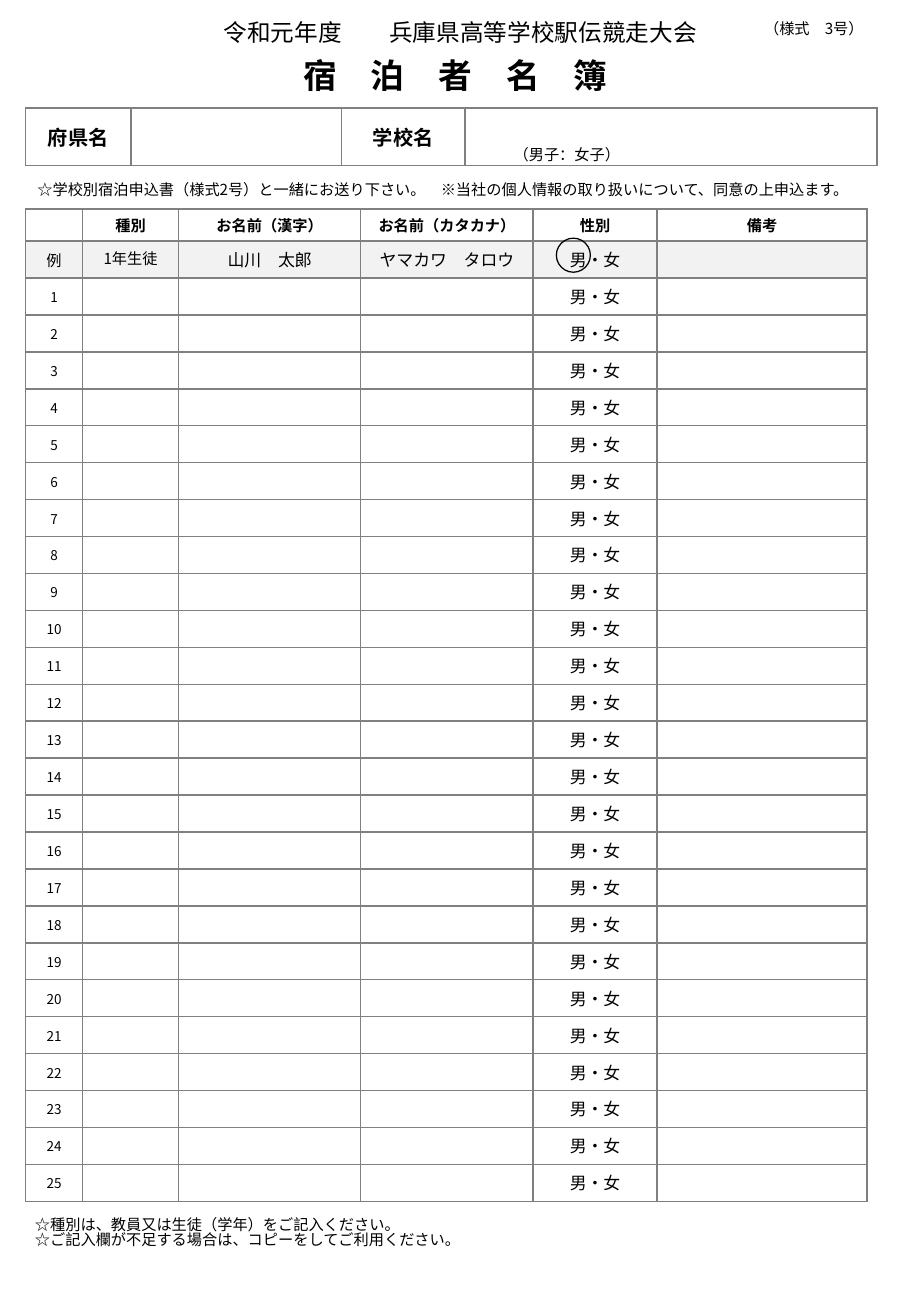
from pptx import Presentation
from pptx.dml.color import RGBColor
from pptx.enum.shapes import MSO_SHAPE as Shape
from pptx.enum.text import MSO_ANCHOR as Anchor, PP_ALIGN as Align
from pptx.oxml import parse_xml
from pptx.oxml.ns import nsdecls
from pptx.util import Inches, Pt

BLACK = RGBColor(0x00, 0x00, 0x00)
GRAY = RGBColor(0x80, 0x80, 0x80)
PALE = RGBColor(0xF2, 0xF2, 0xF2)
FACE = "Noto Sans CJK JP"


class Form:
    """Draws on one slide; lengths are percent of its width or height."""

    def __init__(self, deck):
        self.deck = deck
        self.slide = deck.slides.add_slide(deck.slide_layouts[6])

    def wide(self, share):
        return round(self.deck.slide_width * share / 100)

    def high(self, share):
        return round(self.deck.slide_height * share / 100)

    def place(self, left, top, width, height):
        return self.wide(left), self.high(top), self.wide(width), self.high(height)

    def label(self, para, text, size, bold=False, align=Align.CENTER):
        para.alignment = align
        run = para.add_run()
        run.text = text
        style = {"size": Pt(size), "bold": bold, "name": FACE}
        for key, value in style.items():
            setattr(run.font, key, value)
        run.font.color.rgb = BLACK
        run.font._element.append(
            parse_xml(f'<a:ea {nsdecls("a")} typeface="{FACE}"/>'))

    def text(self, at, lines, size, **look):
        frame = self.slide.shapes.add_textbox(*self.place(*at)).text_frame
        frame.word_wrap = True
        for num, line in enumerate(lines):
            para = frame.add_paragraph() if num else frame.paragraphs[0]
            para.line_spacing = 0.82
            self.label(para, line, size, **look)

    def table(self, left, top, cols, rows):
        """Add an unstyled table from column and row shares."""
        at = self.place(left, top, sum(cols), sum(rows))
        grid = self.slide.shapes.add_table(len(rows), len(cols), *at).table
        grid.first_row = grid.horz_banding = False
        for col, share in zip(grid.columns, cols):
            col.width = self.wide(share)
        for row, share in zip(grid.rows, rows):
            row.height = self.high(share)
        return grid

    def cell(self, cell, text="", size=8, fill=None, pad=0.46, left=0.5,
             anchor=Anchor.MIDDLE, **look):
        style = {"margin_left": self.wide(left), "margin_right": self.wide(0.5),
                 "margin_top": self.high(pad), "margin_bottom": self.high(pad),
                 "vertical_anchor": anchor}
        for key, value in style.items():
            setattr(cell, key, value)
        para = cell.text_frame.paragraphs[0]
        if text:
            self.label(para, text, size, **look)
        else:
            para._p.get_or_add_endParaRPr().set("sz", str(size * 100))
        props = cell._tc.get_or_add_tcPr()
        for side in ("lnL", "lnR", "lnT", "lnB"):
            props.append(parse_xml(
                f'<a:{side} {nsdecls("a")} w="{Pt(1)}"><a:solidFill>'
                f'<a:srgbClr val="{GRAY}"/></a:solidFill></a:{side}>'))
        if fill is None:
            cell.fill.background()
        else:
            cell.fill.solid()
            cell.fill.fore_color.rgb = fill

    def ring(self, at):
        ring = self.slide.shapes.add_shape(Shape.OVAL, *self.place(*at))
        ring.shadow.inherit = False
        ring.fill.background()
        ring.line.color.rgb = BLACK
        ring.line.width = Pt(0.75)


def school(form):
    grid = form.table(2.8, 8.22, (11.6, 23.07, 13.6, 45.2), (4.34,))
    for col, name in enumerate(("府県名", "", "学校名")):
        form.cell(grid.cell(0, col), name, 12, bold=True)
    form.cell(grid.cell(0, 3), "（男子：女子）", 9, pad=0, left=5.33,
              anchor=Anchor.BOTTOM, align=Align.LEFT)


def roster(form):
    count = 25
    heads = ("", "種別", "お名前（漢字）", "お名前（カタカナ）", "性別", "備考")
    sample = ("例", "1年生徒", "山川　太郎", "ヤマカワ　タロウ", "男・女", "")
    cols = (6.27, 10.53, 20, 18.93, 13.6, 23.07)
    grid = form.table(2.8, 15.88, cols, [2.44] + [2.81] * (count + 1))
    for col, head in enumerate(heads):
        form.cell(grid.cell(0, col), head, 9, bold=True, pad=0.37,
                  anchor=Anchor.TOP)
    for col, text in enumerate(sample):
        form.cell(grid.cell(1, col), text, 9 if col < 2 else 10, PALE,
                  anchor=Anchor.TOP if col else Anchor.MIDDLE)
    for num in range(1, count + 1):
        for col, text in enumerate((str(num), "", "", "", "男・女", "")):
            form.cell(grid.cell(num + 1, col), text, 10 if col == 4 else 8,
                      anchor=Anchor.TOP if col else Anchor.MIDDLE)


def main():
    deck = Presentation()
    deck.slide_width, deck.slide_height = Inches(7.5), Inches(10.83)
    form = Form(deck)
    form.text((8, 1.29, 85.07, 3.14), ["令和元年度　　兵庫県高等学校駅伝競走大会"], 14)
    form.text((23.73, 4.25, 52.53, 4.06), ["宿　泊　者　名　簿"], 20, bold=True)
    school(form)
    form.text((2.8, 13.48, 93.73, 2.31),
              ["☆学校別宿泊申込書（様式2号）と一緒にお送り下さい。"
               "　※当社の個人情報の取り扱いについて、同意の上申込ます。"],
              9, align=Align.LEFT)
    roster(form)
    form.text((2.53, 92.15, 93.73, 3.69),
              ["☆種別は、教員又は生徒（学年）をご記入ください。",
               "☆ご記入欄が不足する場合は、コピーをしてご利用ください。"],
              9, align=Align.LEFT)
    form.text((82, 1.29, 14.67, 2.31), ["（様式　3号）"], 9)
    form.ring((61.07, 18.1, 3.73, 2.59))
    deck.save("out.pptx")


if __name__ == "__main__":
    main()
